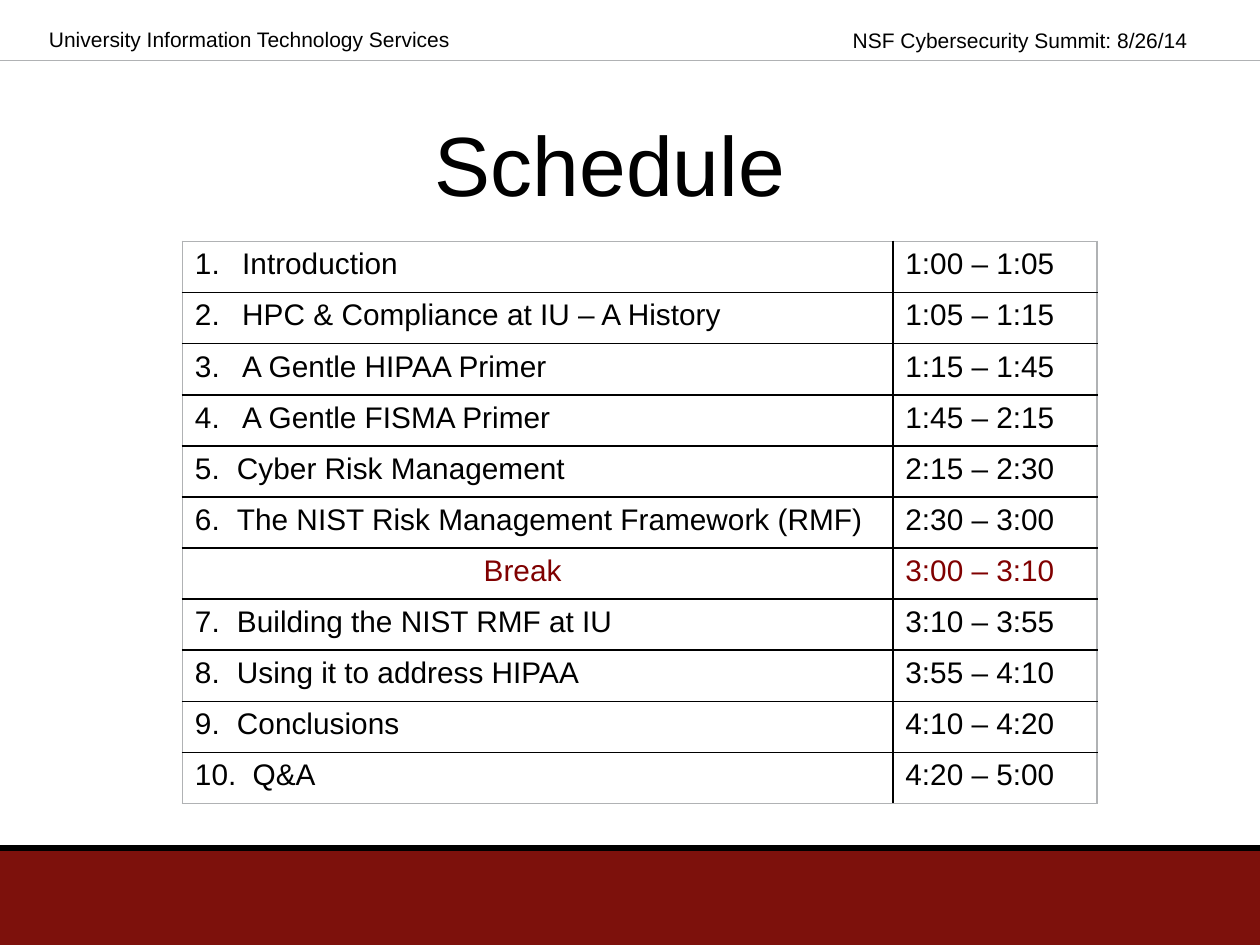
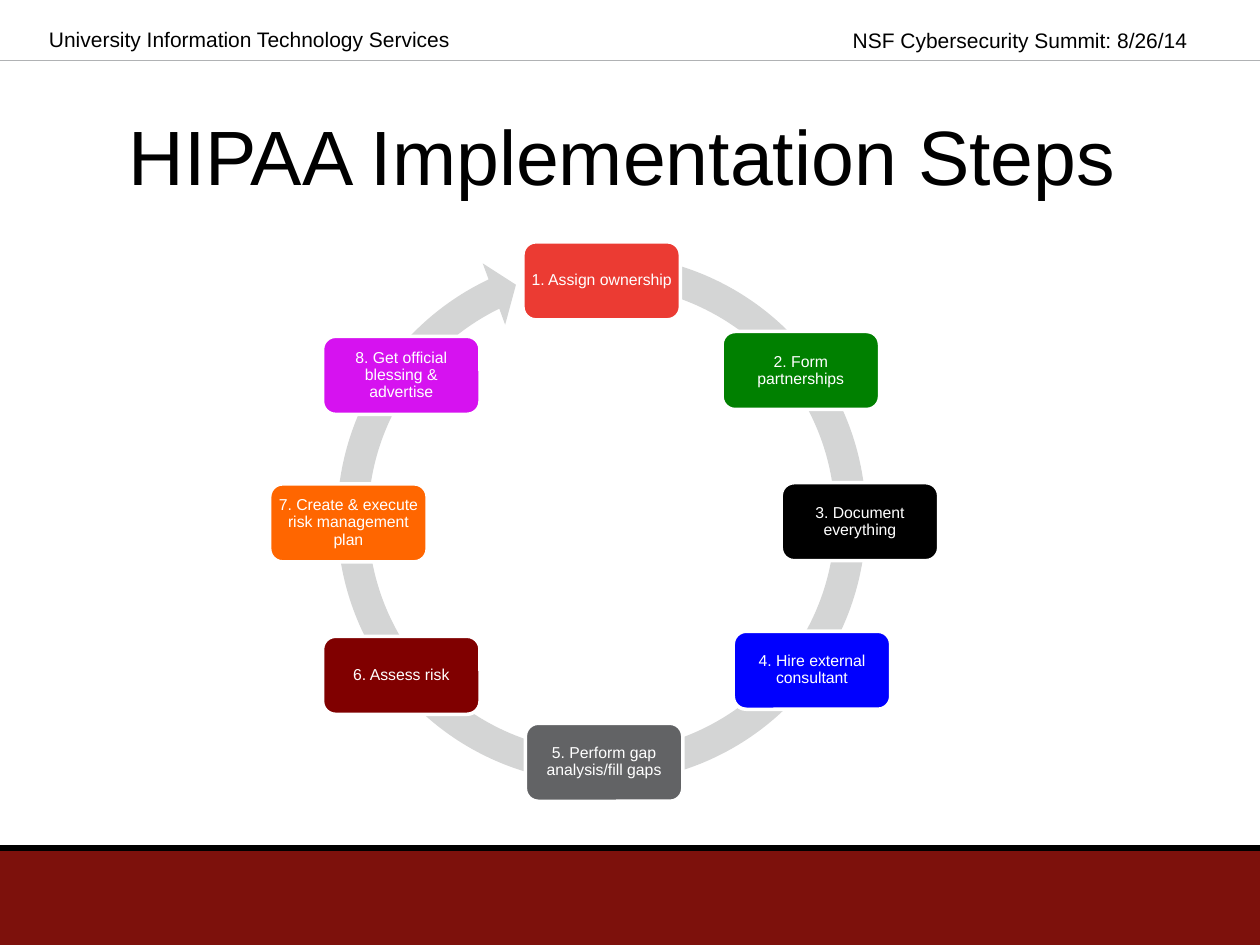
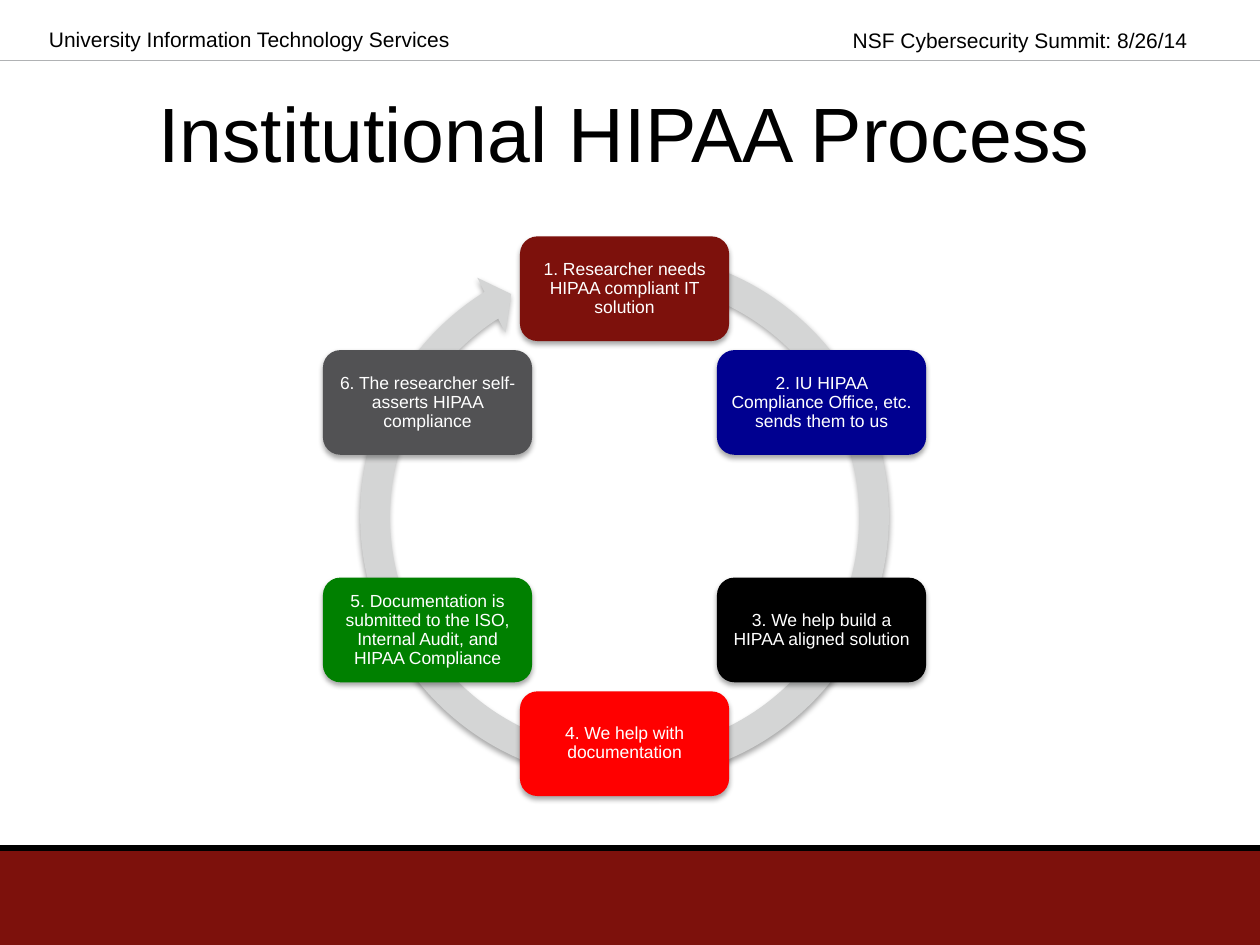
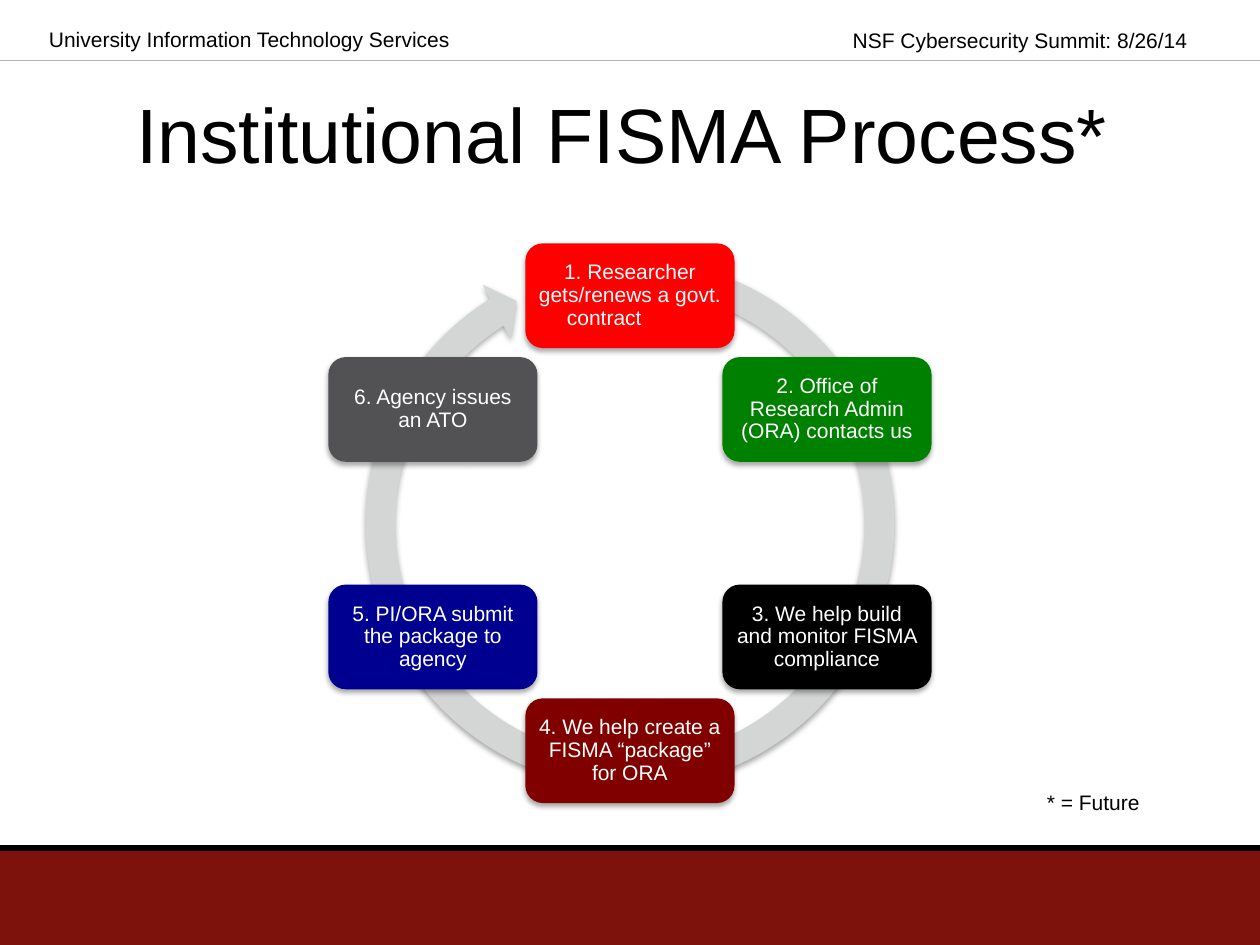
from math import cos, radians, sin

from lxml import etree
from pptx import Presentation
from pptx.dml.color import RGBColor
from pptx.enum.shapes import MSO_CONNECTOR, MSO_SHAPE
from pptx.enum.text import MSO_ANCHOR, PP_ALIGN
from pptx.oxml.ns import qn
from pptx.util import Pt

RECTANGLE, ROUNDED = MSO_SHAPE.RECTANGLE, MSO_SHAPE.ROUNDED_RECTANGLE
CIRCULAR_ARROW = MSO_SHAPE.CIRCULAR_ARROW
STRAIGHT = MSO_CONNECTOR.STRAIGHT
MIDDLE, TOP = MSO_ANCHOR.MIDDLE, MSO_ANCHOR.TOP
LEFT, CENTER = PP_ALIGN.LEFT, PP_ALIGN.CENTER

COLORS = {
    "crimson": "7D110C", "maroon": "800000", "red": "FF0000", "coral": "EB3B33",
    "orange": "FF6600", "green": "008000", "blue": "0000FF", "navy": "000090",
    "magenta": "D612F0", "gray": "626365", "dark gray": "525254",
    "rule": "B0B2B4", "ring": "D4D5D5", "black": "000000", "white": "FFFFFF",
}
WIDTH, HEIGHT = 720, 540


def write(frame, text, size, color="black", align=LEFT, anchor=TOP, wrap=True, inset=None):
    """Fill a text frame with one paragraph and return that paragraph."""
    layout = {"word_wrap": wrap, "vertical_anchor": anchor}
    if inset is not None:
        for side in ("left", "right", "top", "bottom"):
            layout[f"margin_{side}"] = Pt(inset)
    for name, value in layout.items():
        setattr(frame, name, value)
    paragraph = frame.paragraphs[0]
    paragraph.alignment = align
    run = paragraph.add_run()
    run.text = text
    for name, value in {"name": "Arial", "size": Pt(size)}.items():
        setattr(run.font, name, value)
    run.font.color.rgb = RGBColor.from_string(COLORS[color])
    return paragraph


def draw(slide, kind, box, fill, outline=None, shadow=False):
    """Add a filled preset shape, with an optional white outline or soft shadow."""
    shape = slide.shapes.add_shape(kind, *map(Pt, box))
    shape.fill.solid()
    shape.fill.fore_color.rgb = RGBColor.from_string(COLORS[fill])
    if outline:
        shape.line.color.rgb = RGBColor.from_string(COLORS["white"])
        shape.line.width = Pt(outline)
    else:
        shape.line.fill.background()
    shape.shadow.inherit = False
    if shadow:
        effects = shape._element.spPr.find(qn("a:effectLst"))
        outer = etree.SubElement(effects, qn("a:outerShdw"), blurRad=str(Pt(3.1)),
                                 dist=str(Pt(1.8)), dir="5400000", rotWithShape="0")
        tint = etree.SubElement(outer, qn("a:srgbClr"), val=COLORS["black"])
        etree.SubElement(tint, qn("a:alpha"), val="35000")
    return shape


prs = Presentation()
prs.slide_width, prs.slide_height = Pt(WIDTH), Pt(HEIGHT)

# Titles: text, size, box
titles = [
    ("Schedule", 48, (68.4, 48.2, 560.2, 90)),
    ("HIPAA Implementation Steps", 44, (25.2, 43.2, 661, 90)),
    ("Institutional HIPAA Process", 44, (-11.5, 30, 736.6, 90)),
    ("Institutional FISMA Process*", 44, (25.2, 31, 661, 90)),
]
headers = [
    ("NSF Cybersecurity Summit: 8/26/14", (480.2, 12.2, 221.8, 23.8)),
    ("University Information Technology Services", (20.9, 11.5, 270, 23.8)),
]
rules = [(34.6, "rule", 0.75), (484.6, "black", 3.75)]

# Shared band, rules, header texts and title of every slide
slides = []
for title, title_size, title_box in titles:
    slide = prs.slides.add_slide(prs.slide_layouts[6])
    draw(slide, RECTANGLE, (0, 486, WIDTH, 54), "crimson")
    for y, color, weight in rules:
        rule = slide.shapes.add_connector(STRAIGHT, 0, Pt(y), Pt(WIDTH), Pt(y))
        rule.line.color.rgb = RGBColor.from_string(COLORS[color])
        rule.line.width = Pt(weight)
        etree.SubElement(rule._element.spPr, qn("a:effectLst"))
    for header, box in headers:
        write(slide.shapes.add_textbox(*map(Pt, box)).text_frame, header, 12)
    title_frame = slide.shapes.add_textbox(*map(Pt, title_box)).text_frame
    write(title_frame, title, title_size, align=CENTER, anchor=MIDDLE)
    slides.append(slide)

# Schedule: item number (none for the break), topic, time, text indent
schedule = [
    (1, "Introduction", "1:00 – 1:05", 27),
    (2, "HPC & Compliance at IU – A History", "1:05 – 1:15", 27),
    (3, "A Gentle HIPAA Primer", "1:15 – 1:45", 27),
    (4, "A Gentle FISMA Primer", "1:45 – 2:15", 27),
    (5, "Cyber Risk Management", "2:15 – 2:30", 24),
    (6, "The NIST Risk Management Framework (RMF)", "2:30 – 3:00", 24),
    (None, "Break", "3:00 – 3:10", 165),
    (7, "Building the NIST RMF at IU", "3:10 – 3:55", 24),
    (8, "Using it to address HIPAA", "3:55 – 4:10", 24),
    (9, "Conclusions", "4:10 – 4:20", 24),
    (10, "Q&A", "4:20 – 5:00", 33),
]
column_widths = [406, 116.6]
row_height = 29.2
last_row, last_column = len(schedule) - 1, len(column_widths) - 1
table = slides[0].shapes.add_table(
    len(schedule), len(column_widths), Pt(104.2), Pt(138),
    Pt(sum(column_widths)), Pt(row_height * len(schedule))).table
table.first_row = table.horz_banding = False
for column, width in zip(table.columns, column_widths):
    column.width = Pt(width)

for r, (number, topic, time, indent) in enumerate(schedule):
    table.rows[r].height = Pt(row_height)
    color = "black" if number else "maroon"
    for c, text in enumerate((topic, time)):
        cell = table.cell(r, c)
        paragraph = write(cell.text_frame, text, 17, color)
        if c == 0:
            properties = paragraph._p.get_or_add_pPr()
            properties.set("marL", str(Pt(indent)))
            if number:
                properties.set("indent", str(-Pt(indent)))
                etree.SubElement(properties, qn("a:buFont"), typeface="+mj-lt")
                etree.SubElement(properties, qn("a:buAutoNum"),
                                 type="arabicPeriod", startAt=str(number))
        # Black inner lines, light outer frame
        outer_edges = {"a:lnL": c == 0, "a:lnR": c == last_column,
                       "a:lnT": r == 0, "a:lnB": r == last_row}
        for edge, is_outer in outer_edges.items():
            border = etree.SubElement(cell._tc.get_or_add_tcPr(), qn(edge), w=str(Pt(1)))
            paint = etree.SubElement(border, qn("a:solidFill"))
            etree.SubElement(paint, qn("a:srgbClr"),
                             val=COLORS["rule" if is_outer else "black"])
        cell.fill.background()

# Cycles: step centres are given relative to the centre of the ring
hexagon = [(130 * sin(radians(60 * i)), -130 * cos(radians(60 * i))) for i in range(6)]
loose_ring = [(0, -135.8), (113.8, -84.6), (147.6, 1.8), (120.2, 86.7),
              (1.4, 139.3), (-114.5, 89.6), (-144.7, 2.5), (-114.5, -81.8)]
# Ring arrow: band %, head degrees, end degrees, start degrees, head %
six_step = {"ring": 320.4, "arrow": (5.3, 5.21, 237.74, 285.09, 5.5),
            "step": (119.5, 59.8), "places": hexagon, "outline": None, "shadow": True}
eight_step = {"ring": 321.8, "arrow": (5.5, 5.51, 244.38, 281.11, 5.8),
              "step": (90, 44.6), "places": loose_ring, "outline": 2, "shadow": False}

cycles = [
    (slides[1], eight_step, (343.8, 296.3), 9, 2.7, [
        ("1. Assign ownership", "coral"),
        ("2. Form partnerships", "green"),
        ("3. Document everything", "black"),
        ("4. Hire external consultant", "blue"),
        ("5. Perform gap analysis/fill gaps", "gray"),
        ("6. Assess risk", "maroon"),
        ("7. Create & execute risk management plan", "orange"),
        ("8. Get official blessing & advertise", "magenta"),
    ]),
    (slides[2], six_step, (356.9, 295), 10, 3, [
        ("1. Researcher needs HIPAA compliant IT solution", "crimson"),
        ("2. IU HIPAA Compliance Office, etc. sends them to us", "navy"),
        ("3. We help build a HIPAA aligned solution", "black"),
        ("4. We help with documentation", "red"),
        ("5. Documentation is submitted to the ISO, Internal Audit, and HIPAA Compliance",
         "green"),
        ("6. The researcher self-asserts HIPAA compliance", "dark gray"),
    ]),
    (slides[3], six_step, (360, 299), 12, 3.6, [
        ("1. Researcher gets/renews a govt. contract\t", "red"),
        ("2. Office of Research Admin (ORA) contacts us", "green"),
        ("3. We help build and monitor FISMA compliance", "black"),
        ("4. We help create a FISMA “package” for ORA", "maroon"),
        ("5. PI/ORA submit the package to agency", "navy"),
        ("6. Agency issues an ATO", "dark gray"),
    ]),
]
for slide, design, (center_x, center_y), size, inset, steps in cycles:
    ring = design["ring"]
    arrow = draw(slide, CIRCULAR_ARROW,
                 (center_x - ring / 2, center_y - ring / 2, ring, ring),
                 "ring", shadow=design["shadow"])
    band, head_angle, end, start, head = design["arrow"]
    arrow_values = (band / 100, head_angle * 0.6, end * 0.6, start * 0.6, head / 100)
    for i, value in enumerate(arrow_values):
        arrow.adjustments[i] = value
    width, height = design["step"]
    for (label, color), (dx, dy) in zip(steps, design["places"]):
        box = (center_x + dx - width / 2, center_y + dy - height / 2, width, height)
        step = draw(slide, ROUNDED, box, color, design["outline"], design["shadow"])
        paragraph = write(step.text_frame, label, size, "white", CENTER, MIDDLE, inset=inset)
        paragraph.line_spacing = 0.9

# Footnote to the FISMA title
footnote = slides[3].shapes.add_textbox(Pt(591.1), Pt(447.8), Pt(68.4), Pt(21.6))
write(footnote.text_frame, "* = Future", 12, wrap=False)

prs.save("out.pptx")
